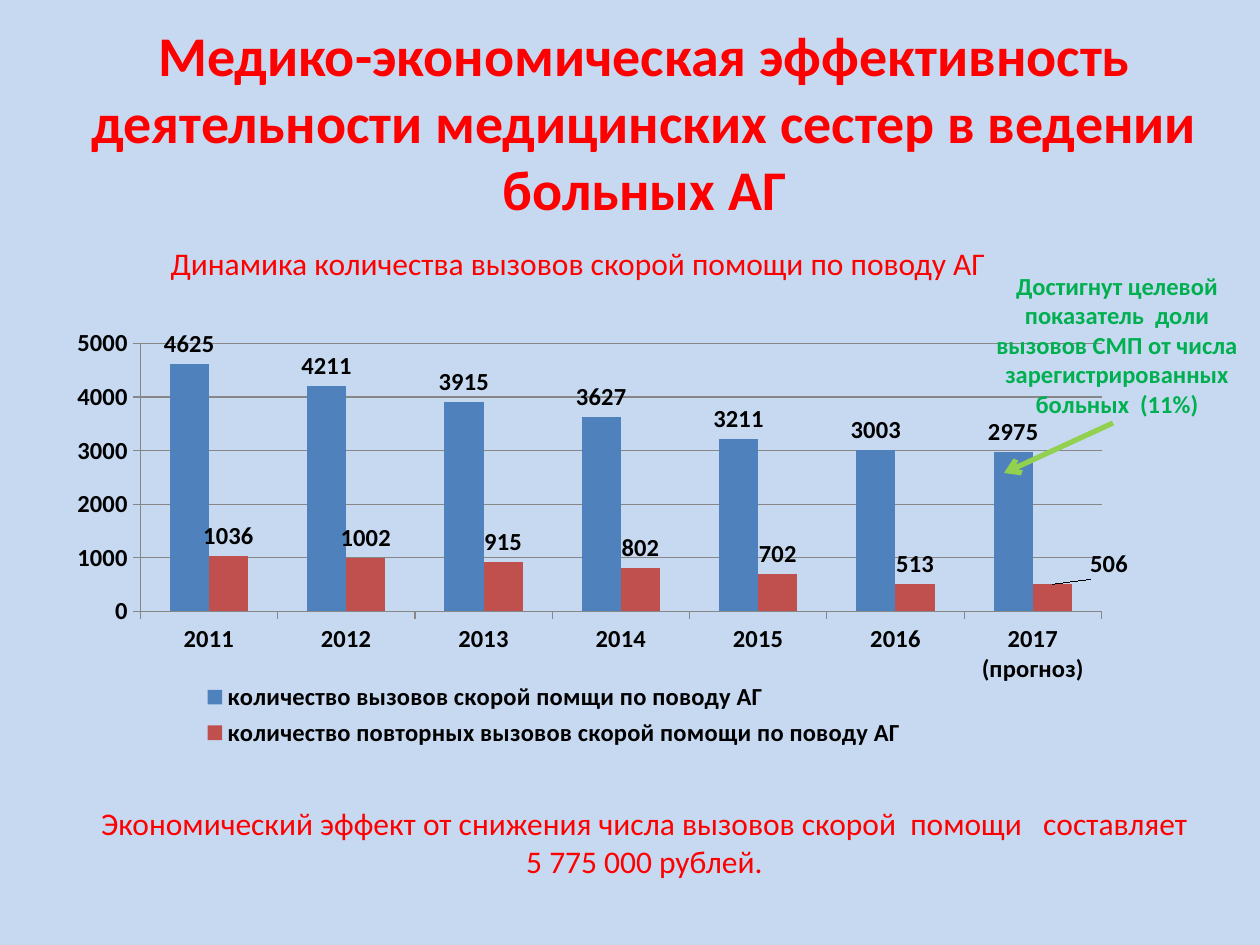
from lxml.etree import SubElement
from pptx import Presentation
from pptx.chart.data import CategoryChartData
from pptx.dml.color import RGBColor
from pptx.enum.chart import XL_CHART_TYPE, XL_LABEL_POSITION, XL_LEGEND_POSITION, XL_TICK_MARK
from pptx.enum.shapes import MSO_CONNECTOR
from pptx.enum.text import MSO_ANCHOR, PP_ALIGN
from pptx.oxml.ns import qn
from pptx.util import Pt

EMU_PER_PX = 914400 / 126
FONT = "Calibri"
COLORS = {
    "background": "C6D9F1",
    "heading": "FF0000",
    "target": "00B050",
    "arrow": "92D050",
    "calls": "4F81BD",
    "repeat_calls": "C0504D",
    "axis": "878787",
    "chart_text": "000000",
}
YEARS = ["2011", "2012", "2013", "2014", "2015", "2016", "2017 (прогноз)"]
CALLS = [
    ("calls", "количество вызовов скорой помщи по поводу АГ",
     [4625, 4211, 3915, 3627, 3211, 3003, 2975]),
    ("repeat_calls", "количество повторных вызовов скорой помощи по поводу АГ",
     [1036, 1002, 915, 802, 702, 513, 506]),
]


def px(*lengths):
    return [round(length * EMU_PER_PX) for length in lengths]


def color(name):
    return RGBColor.from_string(COLORS[name])


def add_text(slide, text, box, *, size, tint="heading", bold=False):
    frame = slide.shapes.add_textbox(*px(*box)).text_frame
    frame.word_wrap = True
    frame.vertical_anchor = MSO_ANCHOR.MIDDLE
    paragraph = frame.paragraphs[0]
    paragraph.text = text
    paragraph.alignment = PP_ALIGN.CENTER
    font = paragraph.font
    font.name, font.size, font.bold = FONT, Pt(size), bold
    font.color.rgb = color(tint)


def set_layout(parent, index, **settings):
    for old in parent.findall(qn("c:layout")):
        parent.remove(old)
    layout = SubElement(parent, qn("c:layout"))
    parent.insert(index, layout)
    manual = SubElement(layout, qn("c:manualLayout"))
    for tag, value in settings.items():
        SubElement(manual, qn(f"c:{tag}")).set("val", str(value))


def style_axis(axis):
    axis.major_tick_mark = XL_TICK_MARK.OUTSIDE
    axis.minor_tick_mark = XL_TICK_MARK.NONE
    axis.format.line.color.rgb = color("axis")


def add_calls_chart(slide, box):
    data = CategoryChartData()
    data.categories = YEARS
    for _, name, values in CALLS:
        data.add_series(name, values)
    chart = slide.shapes.add_chart(XL_CHART_TYPE.COLUMN_CLUSTERED, *px(*box), data).chart
    chart.has_title = False
    chart.font.name, chart.font.size, chart.font.bold = FONT, Pt(14), True
    chart.font.color.rgb = color("chart_text")

    style_axis(chart.category_axis)
    values_axis = chart.value_axis
    style_axis(values_axis)
    values_axis.minimum_scale, values_axis.maximum_scale = 0, 5000
    values_axis.major_unit = 1000
    values_axis.has_major_gridlines = True
    values_axis.major_gridlines.format.line.color.rgb = color("axis")

    plot = chart.plots[0]
    plot.gap_width, plot.overlap = 150, 0
    plot.vary_by_categories = False
    for series, (tint, _, _) in zip(plot.series, CALLS):
        series.format.fill.solid()
        series.format.fill.fore_color.rgb = color(tint)
        series.data_labels.show_value = True
        series.data_labels.position = XL_LABEL_POSITION.OUTSIDE_END

    repeat_calls = plot.series[1]
    forecast = repeat_calls.points[len(YEARS) - 1].data_label
    forecast.position = XL_LABEL_POSITION.OUTSIDE_END
    set_layout(repeat_calls._element.find(f".//{qn('c:dLbl')}"), 1, x=0.05, y=0)

    chart.has_legend = True
    chart.legend.position = XL_LEGEND_POSITION.BOTTOM
    chart.legend.include_in_layout = False
    set_layout(chart.legend._element, 1, xMode="edge", yMode="edge",
               x=0.17, y=0.8, w=0.64, h=0.17)
    set_layout(chart._chartSpace.find(f".//{qn('c:plotArea')}"), 0,
               layoutTarget="inner", xMode="edge", yMode="edge",
               x=0.124, y=0.063, w=0.85, h=0.593)


def add_target_callout(slide, box):
    left, top, width, height = box
    add_text(slide, "Достигнут целевой показатель  доли вызовов СМП от числа "
             "зарегистрированных больных  (11%)", box, size=14, tint="target", bold=True)
    start_x, start_y = left + width // 2 - 4, top + height - 20
    arrow = slide.shapes.add_connector(
        MSO_CONNECTOR.STRAIGHT, *px(start_x, start_y, start_x - 109, start_y + 50))
    arrow.line.color.rgb = color("arrow")
    arrow.line.width = Pt(3)
    SubElement(arrow.line._get_or_add_ln(), qn("a:tailEnd")).set("type", "arrow")
    SubElement(arrow._element.spPr, qn("a:effectLst"))


def build_slide(presentation):
    slide = presentation.slides.add_slide(presentation.slide_layouts[6])
    slide.background.fill.solid()
    slide.background.fill.fore_color.rgb = color("background")
    add_text(slide, "Медико-экономическая эффективность деятельности медицинских "
             "сестер в ведении больных АГ", (29, 42, 1231, 158), size=32, bold=True)
    add_calls_chart(slide, (0, 315, 1131, 452))
    add_text(slide, "Динамика количества вызовов скорой помощи по поводу АГ",
             (66, 228, 1024, 69), size=18)
    add_text(slide, "Экономический эффект от снижения числа вызовов скорой  помощи   "
             "составляет 5 775 000 рублей.", (88, 778, 1113, 128), size=18)
    add_target_callout(slide, (974, 246, 286, 197))


def main():
    presentation = Presentation()
    presentation.slide_width, presentation.slide_height = px(1260, 945)
    build_slide(presentation)
    presentation.save("out.pptx")


if __name__ == "__main__":
    main()
